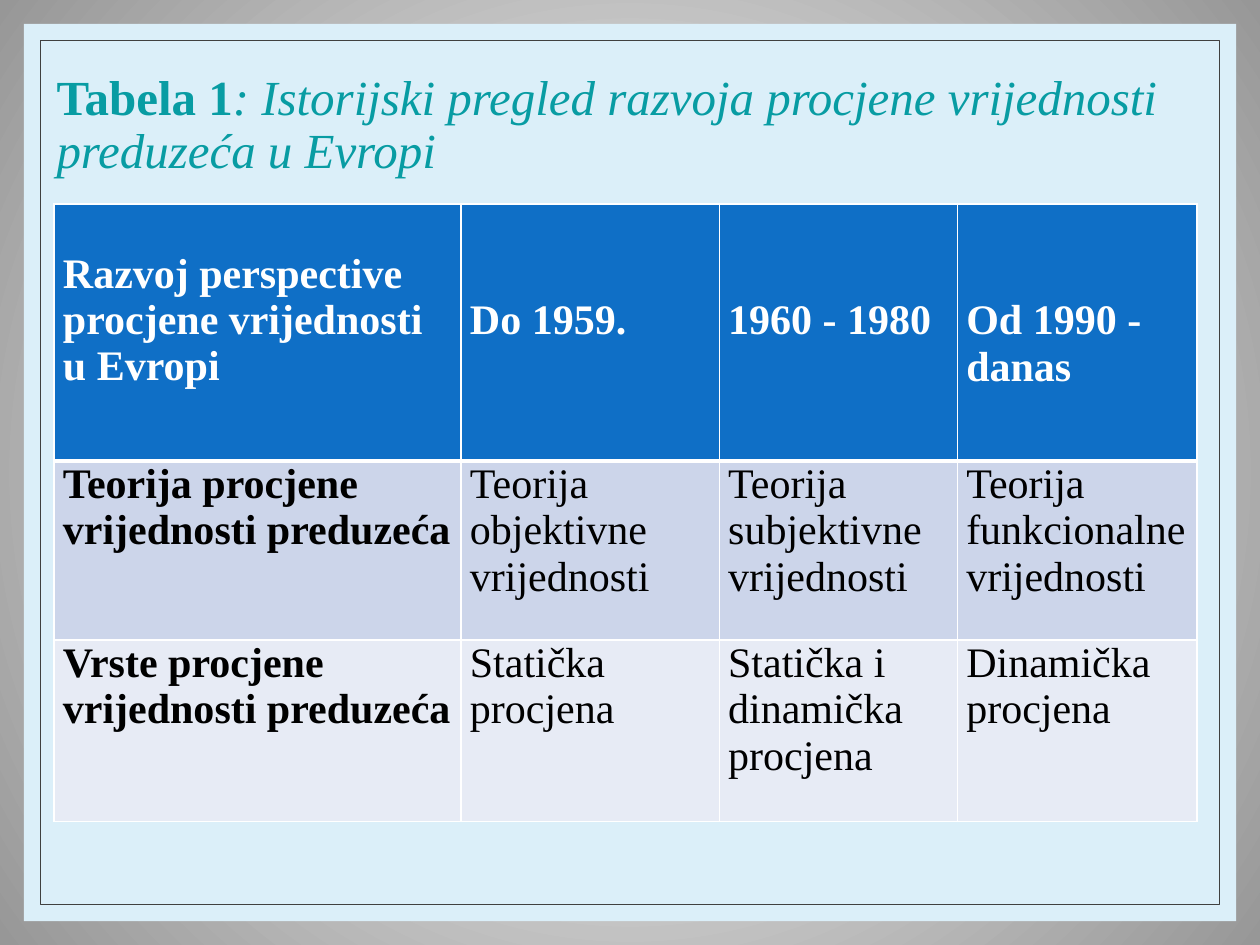
from lxml.etree import SubElement
from pptx import Presentation
from pptx.dml.color import RGBColor
from pptx.enum.shapes import MSO_SHAPE
from pptx.enum.text import MSO_ANCHOR
from pptx.oxml import parse_xml
from pptx.oxml.ns import nsdecls, qn
from pptx.util import Inches, Pt

# Content
TITLE = [
    ("Tabela 1", {"bold": True}),
    (": Istorijski pregled razvoja procjene vrijednosti preduzeća u Evropi",
     {"bold": False, "italic": True}),
]
ROWS = [
    ["Razvoj perspective procjene vrijednosti u Evropi",
     "Do 1959.", "1960 - 1980", "Od 1990 - danas"],
    ["Teorija procjene vrijednosti preduzeća", "Teorija objektivne vrijednosti",
     "Teorija subjektivne vrijednosti", "Teorija funkcionalne vrijednosti"],
    ["Vrste procjene vrijednosti preduzeća", "Statička procjena",
     "Statička i dinamička procjena", "Dinamička procjena"],
]

# Format
FONT = "Times New Roman"
COLUMN_WIDTHS = [3.23, 2.05, 1.89, 1.9]
ROW_HEIGHTS = [2.04, 1.42, 1.44]
ROW_FILLS = ["0F6FC6", "CCD5EA", "E7EBF5"]
HEADER_TOPS = [0.37, 0.74, 0.74, 0.74]  # whole text lines of 0.37 in


def color(value):
    return RGBColor.from_string(value)


def add_span(para, text, size, tint, **values):
    span = para.add_run()
    span.text = text
    span.font.color.rgb = color(tint)
    for name, value in {"name": FONT, "size": Pt(size), **values}.items():
        setattr(span.font, name, value)


def add_panel(page, left, top, width, height, fill=None, line=None):
    panel = page.shapes.add_shape(MSO_SHAPE.RECTANGLE, Inches(left), Inches(top),
                                  Inches(width), Inches(height))
    panel.shadow.inherit = False
    for part, tint in ((panel.fill, fill), (panel.line.fill, line)):
        if tint:
            part.solid()
            part.fore_color.rgb = color(tint)
        else:
            part.background()
    if line:
        panel.line.width = Pt(0.5)


def set_borders(cell, widths):
    properties = cell._tc.get_or_add_tcPr()
    for index, (side, width) in enumerate(widths.items()):
        border = SubElement(properties, qn(f"a:ln{side}"), w=str(Pt(width)))
        fill = SubElement(border, qn("a:solidFill"))
        SubElement(fill, qn("a:srgbClr"), val="FFFFFF")
        properties.insert(index, border)


def set_radial_background(page, inner, outer):
    page.background.fill.solid()
    solid = page.element.find(".//" + qn("p:bgPr")).find(qn("a:solidFill"))
    gradient = parse_xml(
        f'<a:gradFill {nsdecls("a")} rotWithShape="1"><a:gsLst>'
        f'<a:gs pos="0"><a:srgbClr val="{inner}"/></a:gs>'
        f'<a:gs pos="100000"><a:srgbClr val="{outer}"/></a:gs></a:gsLst>'
        '<a:path path="circle"><a:fillToRect l="50000" t="50000" r="50000" b="50000"/>'
        '</a:path></a:gradFill>')
    solid.getparent().replace(solid, gradient)


def add_title(page):
    box = page.shapes.add_textbox(Inches(0.35), Inches(0.29), Inches(9.15), Inches(1.42))
    frame = box.text_frame
    frame.word_wrap = True
    frame.vertical_anchor = MSO_ANCHOR.MIDDLE
    para = frame.paragraphs[0]
    para.line_spacing = 0.9
    for text, style in TITLE:
        add_span(para, text, 28, "089CA3", **style)


def add_history_table(page):
    table = page.shapes.add_table(
        len(ROWS), len(COLUMN_WIDTHS), Inches(0.43), Inches(1.62),
        Inches(sum(COLUMN_WIDTHS)), Inches(sum(ROW_HEIGHTS))).table
    for column, width in zip(table.columns, COLUMN_WIDTHS):
        column.width = Inches(width)
    for row, height in zip(table.rows, ROW_HEIGHTS):
        row.height = Inches(height)
    for r, texts in enumerate(ROWS):
        header = r == 0
        for c, text in enumerate(texts):
            cell = table.cell(r, c)
            cell.fill.solid()
            cell.fill.fore_color.rgb = color(ROW_FILLS[r])
            cell.margin_left = cell.margin_right = Inches(0.07)
            cell.margin_top = Inches(HEADER_TOPS[c] if header else 0)
            cell.margin_bottom = 0
            set_borders(cell, {"L": 1, "R": 1, "T": 3 if r == 1 else 1,
                               "B": 3 if header else 1})
            add_span(cell.text_frame.paragraphs[0], text, 24,
                     "FFFFFF" if header else "000000", bold=header or c == 0)


def main():
    deck = Presentation()
    deck.slide_width, deck.slide_height = Inches(10), Inches(7.5)
    page = deck.slides.add_slide(deck.slide_layouts[6])
    # Backdrop and frame
    set_radial_background(page, "FFFFFF", "979797")
    add_panel(page, 0.19, 0.19, 9.62, 7.12, fill="DBEFF9")
    add_panel(page, 0.32, 0.32, 9.36, 6.86, line="404040")
    # Title and table
    add_title(page)
    add_history_table(page)
    deck.save("out.pptx")


if __name__ == "__main__":
    main()
